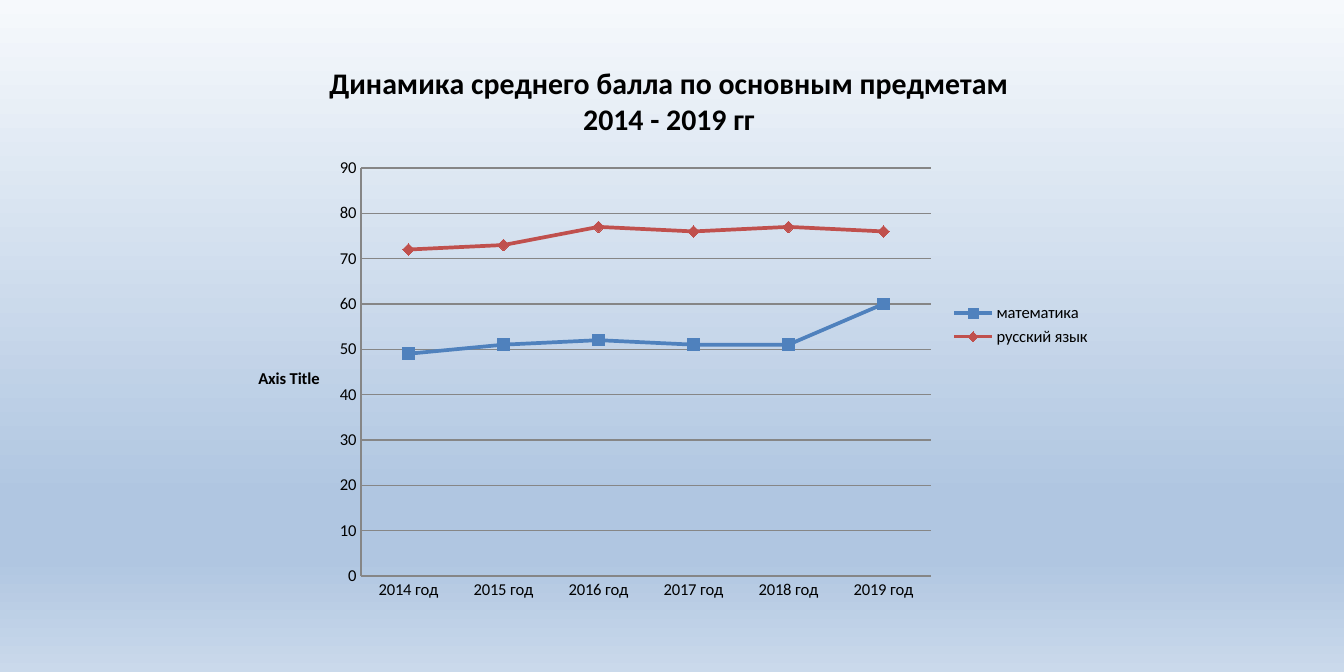
from lxml import etree
from pptx import Presentation
from pptx.chart.data import CategoryChartData
from pptx.dml.color import RGBColor
from pptx.enum.chart import XL_CHART_TYPE, XL_LEGEND_POSITION, XL_MARKER_STYLE, XL_TICK_MARK
from pptx.oxml.ns import qn
from pptx.util import Emu, Pt

LINE_MARKERS = XL_CHART_TYPE.LINE_MARKERS
LEGEND_RIGHT = XL_LEGEND_POSITION.RIGHT
SQUARE, DIAMOND = XL_MARKER_STYLE.SQUARE, XL_MARKER_STYLE.DIAMOND
NO_TICK = XL_TICK_MARK.NONE

BLACK = RGBColor(0x00, 0x00, 0x00)
GRAY = RGBColor(0x86, 0x86, 0x86)
BLUE = RGBColor(0x4F, 0x81, 0xBD)
RED = RGBColor(0xC0, 0x50, 0x4D)
PALE = RGBColor(0xF6, 0xF9, 0xFC)
SKY = RGBColor(0xB0, 0xC6, 0xE1)
MIST = RGBColor(0xCA, 0xD9, 0xEB)

FONT = "Calibri"
TITLE = "Динамика среднего балла по основным предметам 2014 - 2019 гг"
AXIS_TITLE = "Axis Title"
YEARS = [f"{year} год" for year in range(2014, 2020)]
SUBJECTS = [
    ("математика", [49, 51, 52, 51, 51, 60], BLUE, SQUARE),
    ("русский язык", [72, 73, 77, 76, 77, 76], RED, DIAMOND),
]
BACKGROUND_STOPS = [(0, PALE), (74, SKY), (83, SKY), (100, MIST)]

# left, top, width, height in px
PAGE_SIZE = (1344, 672)
CHART_BOX = (235, 39, 868, 572)
PLOT_BOX = (361, 168, 570, 408)
EMU_PER_PX = 914400 / 119.4


def px(length):
    return Emu(round(length * EMU_PER_PX))


def style_font(font, size=10, bold=False):
    font.name, font.size, font.bold = FONT, Pt(size), bold
    font.color.rgb = BLACK


def write_title(owner, text, **font_format):
    """Give a chart or an axis a formatted title and return its text frame."""
    frame = (owner.chart_title if hasattr(owner, "chart_title") else owner.axis_title).text_frame
    frame.text = text
    style_font(frame.paragraphs[0].runs[0].font, **font_format)
    return frame


def paint_background(page):
    fill = page.background.fill
    fill.gradient()
    fill.gradient_angle = 270
    stops = page.background._cSld.find(".//" + qn("a:gsLst"))
    for stop in list(stops):
        stops.remove(stop)
    for percent, color in BACKGROUND_STOPS:
        stop = etree.SubElement(stops, qn("a:gs"), pos=str(percent * 1000))
        etree.SubElement(stop, qn("a:srgbClr"), val=str(color))


def place_plot(chart):
    """Fix the inner plot area as fractions of the chart box."""
    plot_area = chart._chartSpace.chart.plotArea
    for old in plot_area.findall(qn("c:layout")):
        plot_area.remove(old)
    layout = etree.Element(qn("c:layout"))
    plot_area.insert(0, layout)
    manual = etree.SubElement(layout, qn("c:manualLayout"))
    left, top, width, height = CHART_BOX
    plot_left, plot_top, plot_width, plot_height = PLOT_BOX
    settings = [
        ("layoutTarget", "inner"), ("xMode", "edge"), ("yMode", "edge"),
        ("x", round((plot_left - left) / width, 4)),
        ("y", round((plot_top - top) / height, 4)),
        ("w", round(plot_width / width, 4)),
        ("h", round(plot_height / height, 4)),
    ]
    for name, value in settings:
        etree.SubElement(manual, qn(f"c:{name}"), val=str(value))


def style_axes(chart):
    for axis in (chart.category_axis, chart.value_axis):
        axis.major_tick_mark = axis.minor_tick_mark = NO_TICK
        axis.format.line.color.rgb = GRAY
        axis.format.line.width = Pt(0.75)
        style_font(axis.tick_labels.font)
    values = chart.value_axis
    values.minimum_scale, values.maximum_scale, values.major_unit = 0, 90, 10
    values.has_major_gridlines = True
    values.major_gridlines.format.line.color.rgb = GRAY
    values.major_gridlines.format.line.width = Pt(0.75)
    frame = write_title(values, AXIS_TITLE, bold=True)
    frame._txBody.bodyPr.set("rot", "0")
    frame._txBody.bodyPr.set("vert", "horz")


def style_series(chart):
    chart.plots[0].vary_by_categories = False
    for series, (_, _, color, marker) in zip(chart.plots[0].series, SUBJECTS):
        series.smooth = False
        series.format.line.color.rgb = color
        series.format.line.width = Pt(2.25)
        series.marker.style, series.marker.size = marker, 7
        series.marker.format.fill.solid()
        series.marker.format.fill.fore_color.rgb = color
        series.marker.format.line.color.rgb = color


def add_score_chart(page):
    data = CategoryChartData()
    data.categories = YEARS
    for name, scores, _, _ in SUBJECTS:
        data.add_series(name, scores)
    chart = page.shapes.add_chart(LINE_MARKERS, *map(px, CHART_BOX), data).chart
    style_font(chart.font)
    write_title(chart, TITLE, size=18, bold=True)
    chart.has_legend = True
    chart.legend.position = LEGEND_RIGHT
    chart.legend.include_in_layout = False
    style_font(chart.legend.font)
    style_axes(chart)
    style_series(chart)
    place_plot(chart)


def main():
    deck = Presentation()
    deck.slide_width, deck.slide_height = map(px, PAGE_SIZE)
    page = deck.slides.add_slide(deck.slide_layouts[6])
    paint_background(page)
    add_score_chart(page)
    deck.save("out.pptx")


if __name__ == "__main__":
    main()
